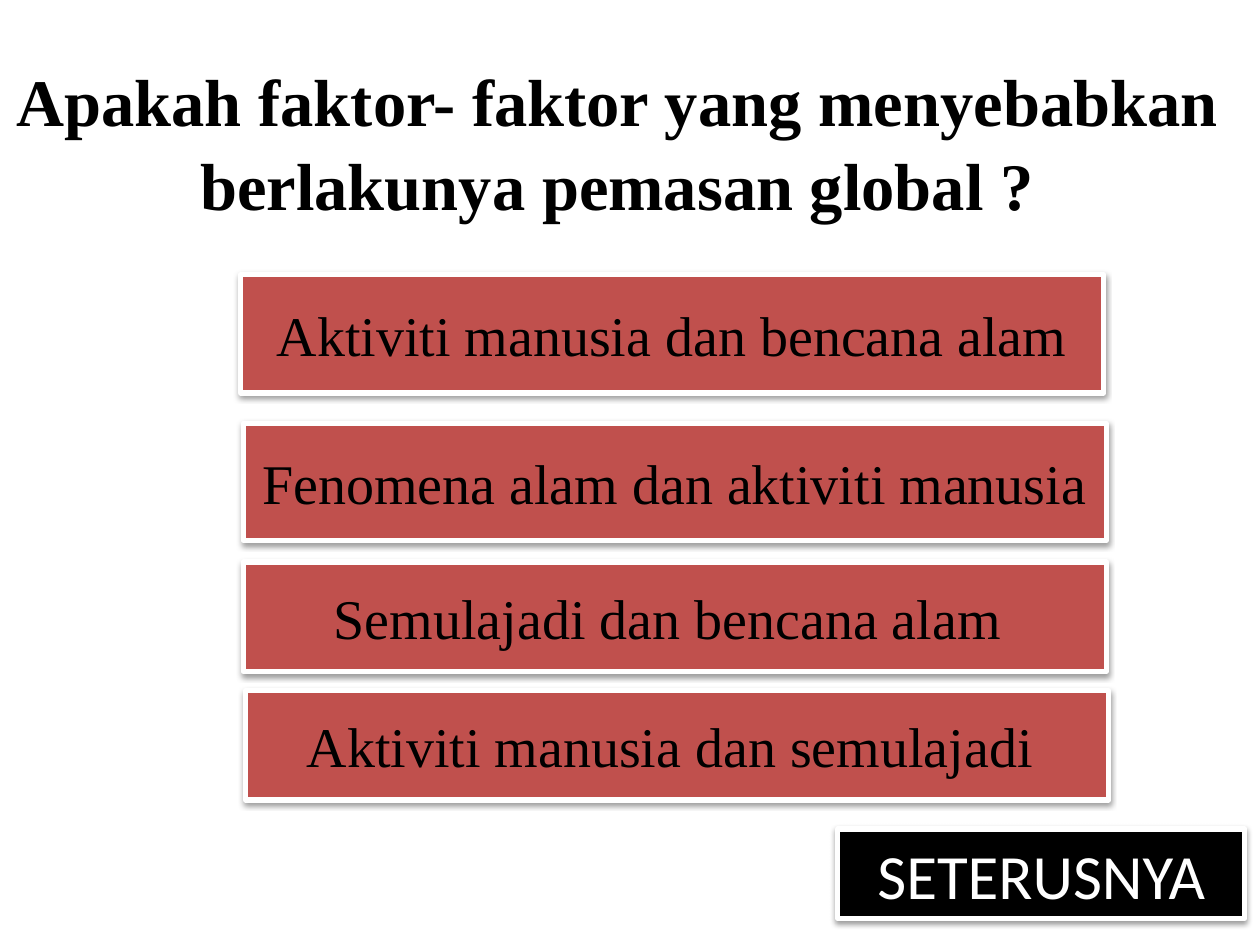
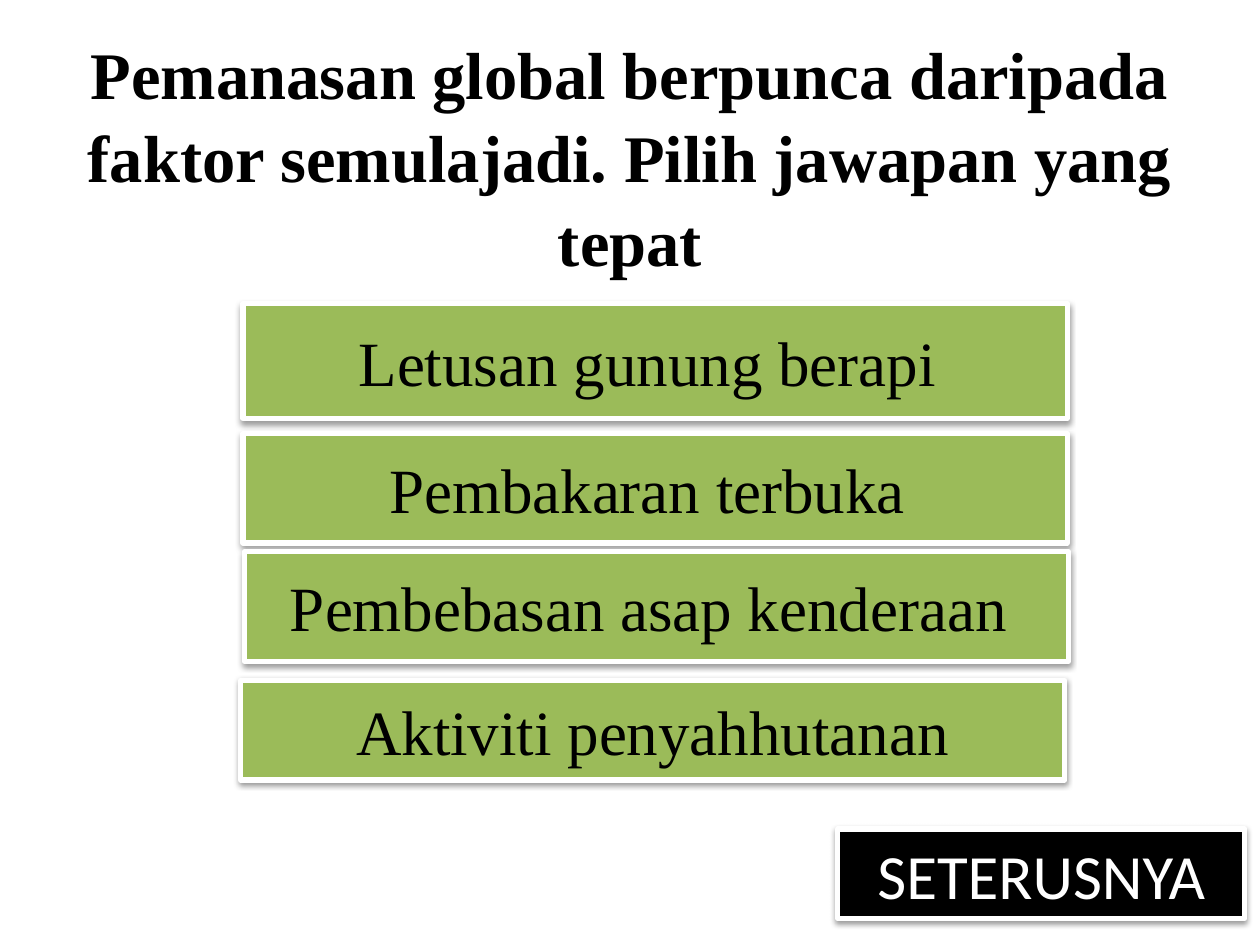
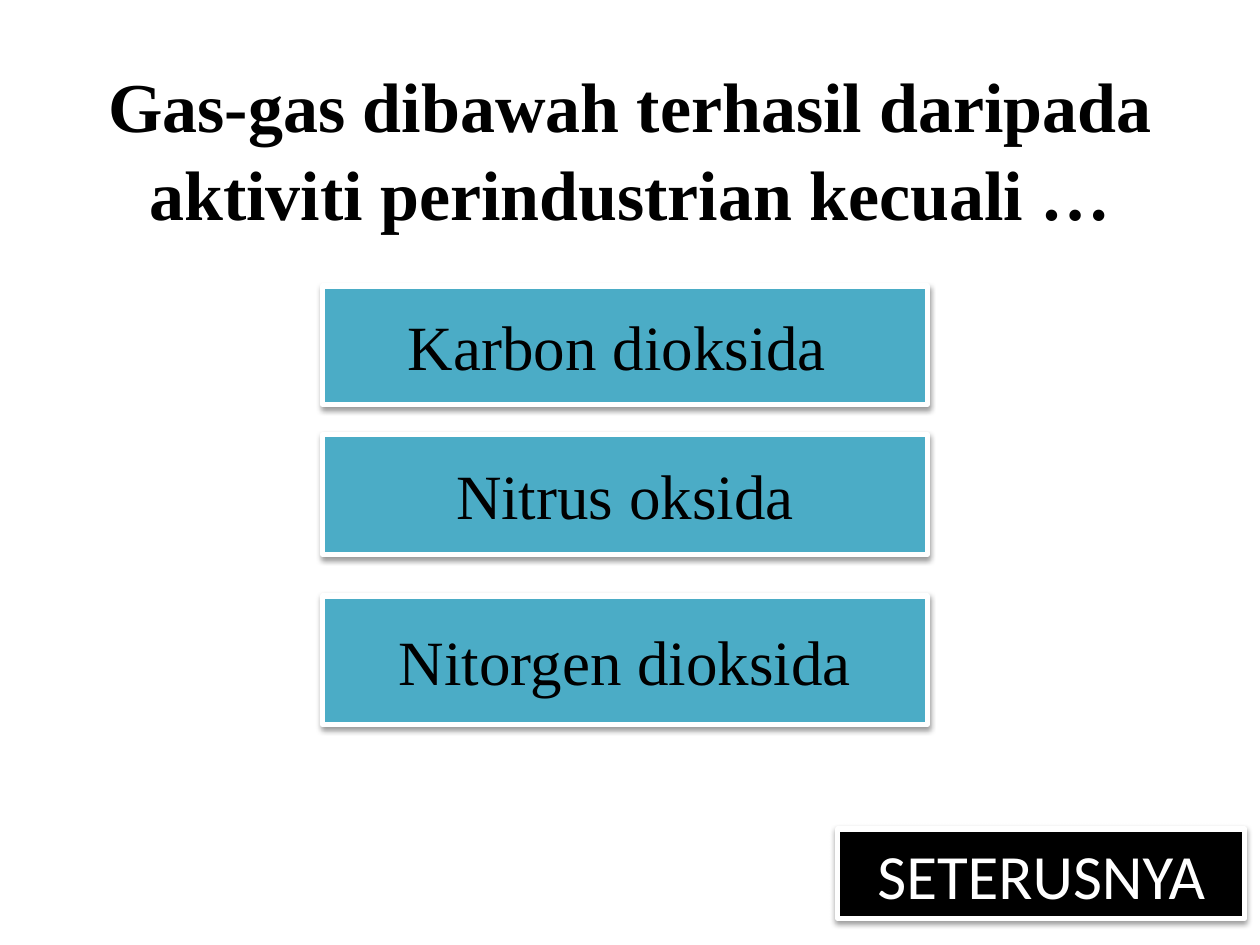
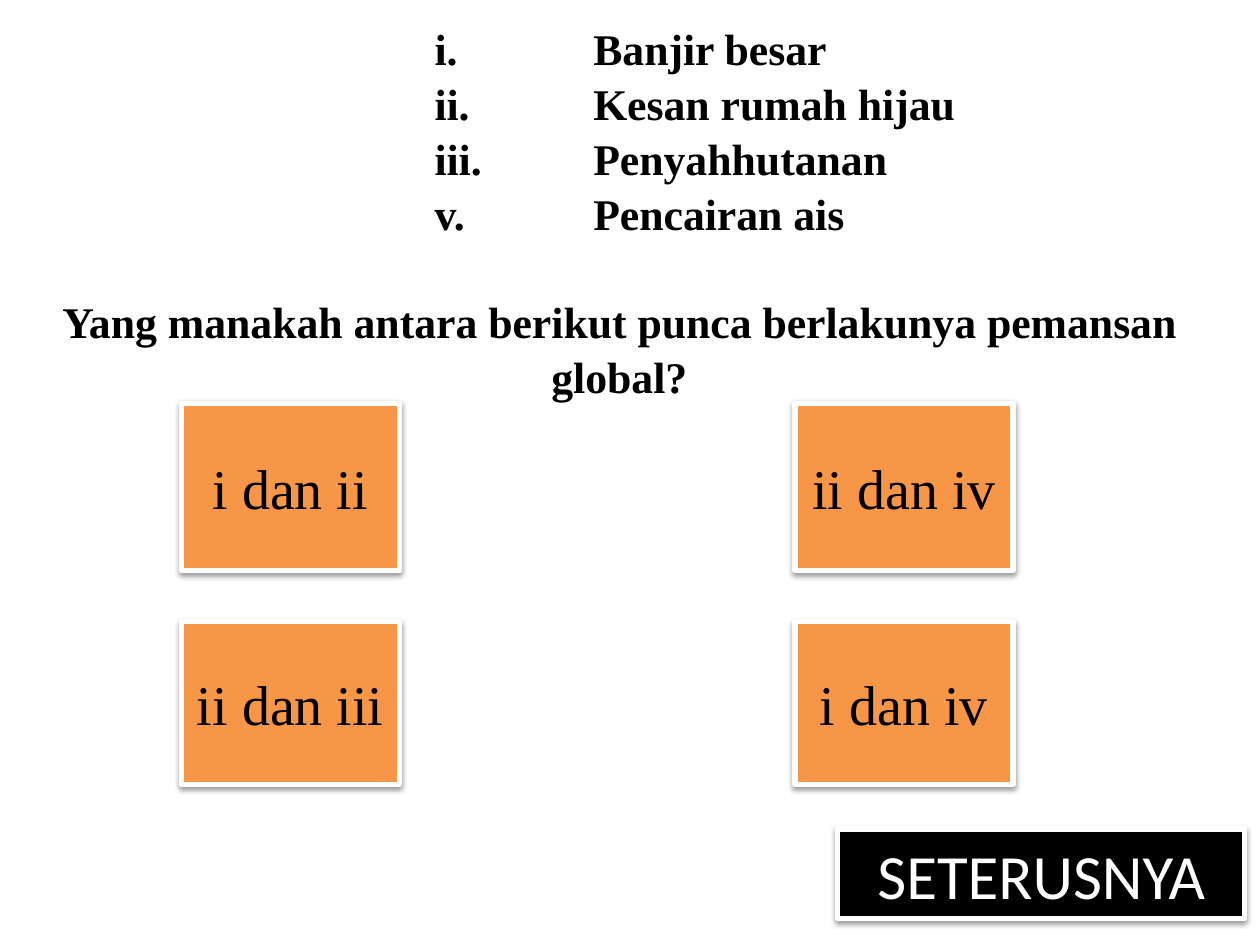
from dataclasses import dataclass
from itertools import product

from lxml import etree
from pptx import Presentation, util as u
from pptx.dml.color import RGBColor
from pptx.enum import shapes, text
from pptx.oxml import ns

BLACK = RGBColor(0x00, 0x00, 0x00)
WHITE = RGBColor(0xFF, 0xFF, 0xFF)
RED = RGBColor(0xC0, 0x50, 0x4D)
GREEN = RGBColor(0x9B, 0xBB, 0x59)
TEAL = RGBColor(0x4B, 0xAC, 0xC6)
ORANGE = RGBColor(0xF7, 0x96, 0x46)
SERIF = "Times New Roman"
SANS = "Calibri"

WIDTH, HEIGHT = u.Inches(10), u.Inches(7.5)
COLUMN, ROW = WIDTH / 100, HEIGHT / 75
TITLE_SPACING = 1.05
CAUSE_TABS = (32.8, 45.4)


@dataclass(frozen=True)
class Area:
    left: float
    top: float
    width: float
    height: float

    def emu(self) -> tuple[int, int, int, int]:
        return (round(self.left * COLUMN), round(self.top * ROW),
                round(self.width * COLUMN), round(self.height * ROW))


@dataclass(frozen=True)
class Answer:
    label: str
    area: Area


@dataclass(frozen=True)
class Question:
    wording: str
    title_area: Area
    title_size: int
    color: RGBColor
    answer_size: int
    answers: list[Answer]
    causes: tuple[str, ...] = ()


NEXT = Answer("SETERUSNYA", Area(66.5, 65.8, 32.3, 7.1))

ORANGE_CELLS = [Area(left, top, 17.3, height)
                for (top, height), left in product(((32, 13.3), (49.35, 12.9)), (14.4, 63.1))]
PAIRS = ("i dan ii", "ii dan iv", "ii dan iii", "i dan iv")

QUESTIONS = [
    Question("Apakah faktor- faktor yang menyebabkan berlakunya pemasan global ?",
             Area(-2, 2.1, 102, 18), 38, RED, 32, [
                 Answer("Aktiviti manusia dan bencana alam", Area(19.1, 21.8, 68.5, 9.4)),
                 Answer("Fenomena alam dan aktiviti manusia ", Area(19.3, 33.6, 68.5, 9.3)),
                 Answer("Semulajadi dan bencana alam ", Area(19.3, 44.6, 68.5, 8.7)),
                 Answer("Aktiviti manusia dan semulajadi ", Area(19.5, 54.8, 68.5, 8.7)),
             ]),
    Question("Pemanasan global berpunca daripada faktor semulajadi. Pilih jawapan yang tepat",
             Area(0, 4.4, 100, 15.7), 38, GREEN, 36, [
                 Answer("Letusan gunung berapi ", Area(19.3, 24.1, 65.4, 9.1)),
                 Answer("Pembakaran terbuka ", Area(19.3, 34.4, 65.4, 8.7)),
                 Answer("Pembebasan asap kenderaan ", Area(19.4, 43.8, 65.4, 8.7)),
                 Answer("Aktiviti penyahhutanan", Area(19.1, 54, 65.4, 7.9)),
             ]),
    Question("Gas-gas dibawah terhasil daripada aktiviti perindustrian kecuali …",
             Area(1.2, 3, 97.6, 17.2), 40, TEAL, 36, [
                 Answer("Karbon dioksida ", Area(25.6, 22.7, 48, 9.4)),
                 Answer("Nitrus oksida", Area(25.6, 34.5, 48, 9.5)),
                 Answer("Nitorgen dioksida", Area(25.6, 47.3, 48, 10.2)),
             ]),
    Question("Yang manakah antara berikut punca berlakunya pemansan global?",
             Area(0.7, 2.9, 96.9, 23.5), 25, ORANGE, 32,
             [Answer(label, area) for label, area in zip(PAIRS, ORANGE_CELLS)],
             ("i.\tBanjir besar", "ii.\tKesan rumah hijau",
              "iii.\tPenyahhutanan", "v.\tPencairan ais")),
]


def add_shadow(shape) -> None:
    shape.shadow.inherit = False
    effects = shape._element.spPr.find(ns.qn("a:effectLst"))
    shadow = etree.SubElement(effects, ns.qn("a:outerShdw"), blurRad="40000",
                              dist="20000", dir="5400000", rotWithShape="0")
    tint = etree.SubElement(shadow, ns.qn("a:srgbClr"), val=str(BLACK))
    etree.SubElement(tint, ns.qn("a:alpha"), val="38000")


def add_tabs(paragraph) -> None:
    tabs = etree.SubElement(paragraph._p.get_or_add_pPr(), ns.qn("a:tabLst"))
    for column in CAUSE_TABS:
        etree.SubElement(tabs, ns.qn("a:tab"), pos=str(round(column * COLUMN)), algn="l")


def style(paragraph, size: int, face: str, color: RGBColor, bold: bool = False) -> None:
    for run in paragraph.runs:
        run.font.size = u.Pt(size)
        run.font.name = face
        run.font.color.rgb = color
        run.font.bold = bold


def add_button(slide, answer: Answer, fill: RGBColor, size: int,
               face: str = SERIF, color: RGBColor = BLACK) -> None:
    button = slide.shapes.add_shape(shapes.MSO_SHAPE.ACTION_BUTTON_CUSTOM, *answer.area.emu())
    button.fill.solid()
    button.fill.fore_color.rgb = fill
    button.line.color.rgb = WHITE
    button.line.width = u.Pt(3)
    add_shadow(button)
    frame = button.text_frame
    frame.word_wrap = True
    frame.vertical_anchor = text.MSO_ANCHOR.MIDDLE
    frame.text = answer.label
    frame.paragraphs[0].alignment = text.PP_ALIGN.CENTER
    style(frame.paragraphs[0], size, face, color)


def add_title(slide, question: Question) -> None:
    frame = slide.shapes.add_textbox(*question.title_area.emu()).text_frame
    frame.word_wrap = True
    frame.vertical_anchor = text.MSO_ANCHOR.MIDDLE
    causes = [f"\t{cause}" for cause in question.causes]
    frame.text = "\n".join([*causes, question.wording])
    *listed, asked = frame.paragraphs
    for paragraph in frame.paragraphs:
        paragraph.line_spacing = TITLE_SPACING
        style(paragraph, question.title_size, SERIF, BLACK, bold=True)
    for paragraph in listed:
        paragraph.alignment = text.PP_ALIGN.LEFT
        add_tabs(paragraph)
    asked.alignment = text.PP_ALIGN.CENTER
    if listed:
        asked.space_before = u.Pt(30)
        frame.margin_top = round(4.6 * ROW)


def main() -> None:
    deck = Presentation()
    deck.slide_width, deck.slide_height = WIDTH, HEIGHT
    for question in QUESTIONS:
        slide = deck.slides.add_slide(deck.slide_layouts[6])
        add_title(slide, question)
        for answer in question.answers:
            add_button(slide, answer, question.color, question.answer_size)
        add_button(slide, NEXT, BLACK, 36, SANS, WHITE)
    deck.save("out.pptx")


if __name__ == "__main__":
    main()
